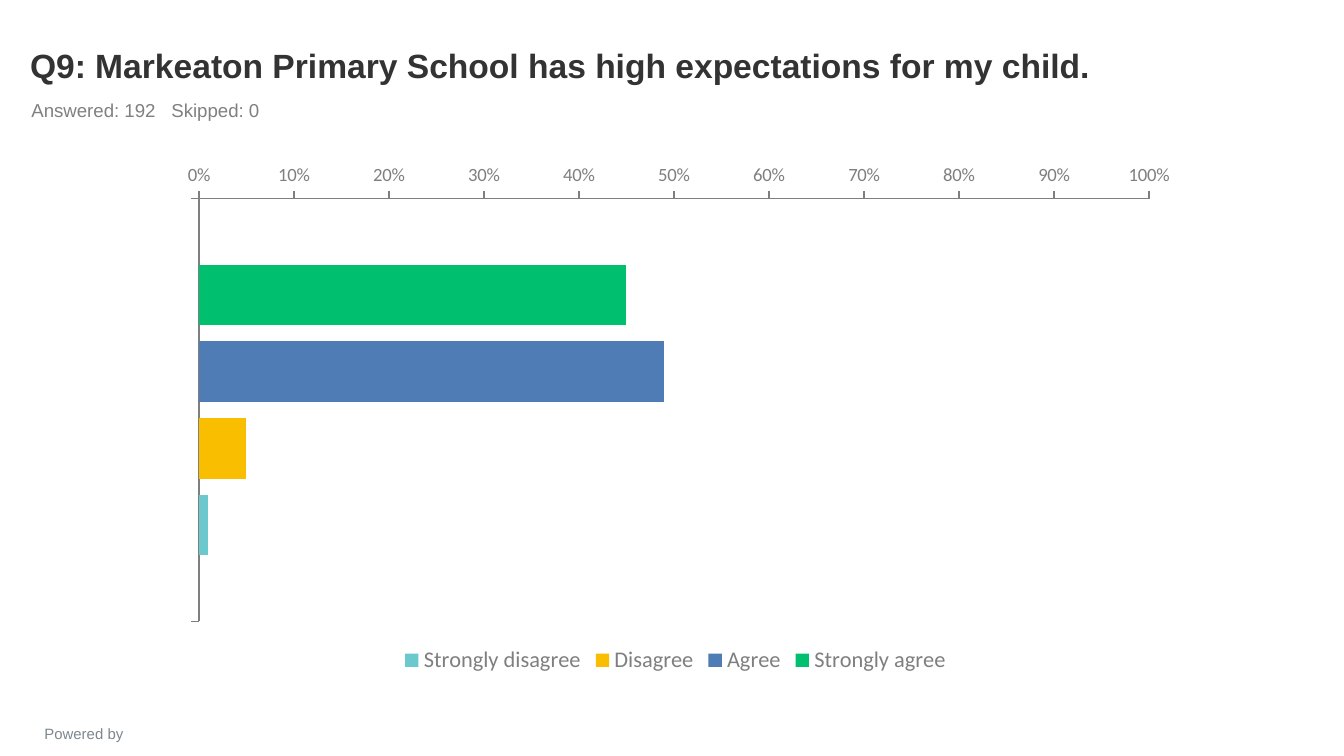
from lxml.etree import SubElement
from pptx import Presentation
from pptx.chart.data import CategoryChartData as ChartData
from pptx.dml.color import RGBColor
from pptx.enum.chart import XL_AXIS_CROSSES as Cross
from pptx.enum.chart import XL_CHART_TYPE as Kind
from pptx.enum.chart import XL_LEGEND_POSITION as Place
from pptx.enum.chart import XL_TICK_LABEL_POSITION as Label
from pptx.enum.chart import XL_TICK_MARK as Tick
from pptx.enum.text import MSO_ANCHOR as Anchor
from pptx.enum.text import PP_ALIGN as Align
from pptx.oxml.ns import qn
from pptx.util import Pt

PX = 9525
DARK = RGBColor(0x33, 0x33, 0x33)
GREY = RGBColor(0x80, 0x80, 0x80)
SLATE = RGBColor(0x7C, 0x87, 0x8E)
AXIS = RGBColor(0x7F, 0x7F, 0x7F)
GREEN = RGBColor(0x00, 0xBF, 0x6F)
BLUE = RGBColor(0x50, 0x7C, 0xB6)
GOLD = RGBColor(0xF9, 0xBE, 0x00)
TEAL = RGBColor(0x6B, 0xC8, 0xCD)


def scale(*box):
    return [n * PX for n in box]


def style(font, size, color, name, bold=False):
    for key, val in {"size": Pt(size), "name": name, "bold": bold}.items():
        setattr(font, key, val)
    font.color.rgb = color


deck = Presentation()
deck.slide_width, deck.slide_height = scale(960, 540)
slide = deck.slides.add_slide(deck.slide_layouts[6])

texts = [
    ("Powered by", (5, 513, 110, 17), Anchor.TOP, Align.CENTER, 8, SLATE, False),
    ("Q9: Markeaton Primary School has high expectations for my child.",
     (12, 9, 864, 57), Anchor.BOTTOM, Align.LEFT, 18, DARK, True),
    ("Answered: 192\tSkipped: 0", (13, 66, 864, 25), Anchor.TOP, Align.LEFT, 10, GREY, False),
]
for words, box, anchor, align, size, color, bold in texts:
    frame = slide.shapes.add_textbox(*scale(*box)).text_frame
    frame.word_wrap = True
    frame.vertical_anchor = anchor
    para = frame.paragraphs[0]
    para.alignment = align
    if "\t" in words:
        tabs = SubElement(para._p.get_or_add_pPr(), qn("a:tabLst"))
        SubElement(tabs, qn("a:tab"), pos=str(100 * PX), algn="l")
    run = para.add_run()
    run.text = words
    style(run.font, size, color, "Arial", bold)

answers = [
    ("Strongly agree", 0.45, GREEN),
    ("Agree", 0.49, BLUE),
    ("Disagree", 0.05, GOLD),
    ("Strongly disagree", 0.01, TEAL),
]
data = ChartData(number_format="0%")
data.categories = [" "]
for name, share, color in answers:
    data.add_series(name, [share])
chart = slide.shapes.add_chart(Kind.BAR_CLUSTERED, *scale(115, 110, 735, 375), data).chart
style(chart.font, 18, DARK, "Calibri")
chart.has_title = False

plot = chart.plots[0]
for key, val in {"gap_width": 219, "overlap": -27, "vary_by_categories": False}.items():
    setattr(plot, key, val)
for bar, (name, share, color) in zip(plot.series, answers):
    bar.format.fill.solid()
    bar.format.fill.fore_color.rgb = color
    bar.invert_if_negative = False

cat, val = chart.category_axis, chart.value_axis
for axis in (cat, val):
    axis.has_major_gridlines = False
    axis.major_tick_mark = Tick.OUTSIDE
    axis.minor_tick_mark = Tick.NONE
    axis.format.line.color.rgb = AXIS
    axis.format.line.width = Pt(0.75)
    style(axis.tick_labels.font, 10, AXIS, "Calibri")
cat.reverse_order = True
cat.crosses = Cross.MINIMUM
cat.tick_label_position = Label.LOW
val.minimum_scale, val.maximum_scale, val.major_unit = 0, 1, 0.1
val.tick_labels.number_format = "0%"
val.tick_labels.number_format_is_linked = False

chart.has_legend = True
chart.legend.position = Place.BOTTOM
chart.legend.include_in_layout = False
style(chart.legend.font, 12, AXIS, "Calibri")

deck.save("out.pptx")
